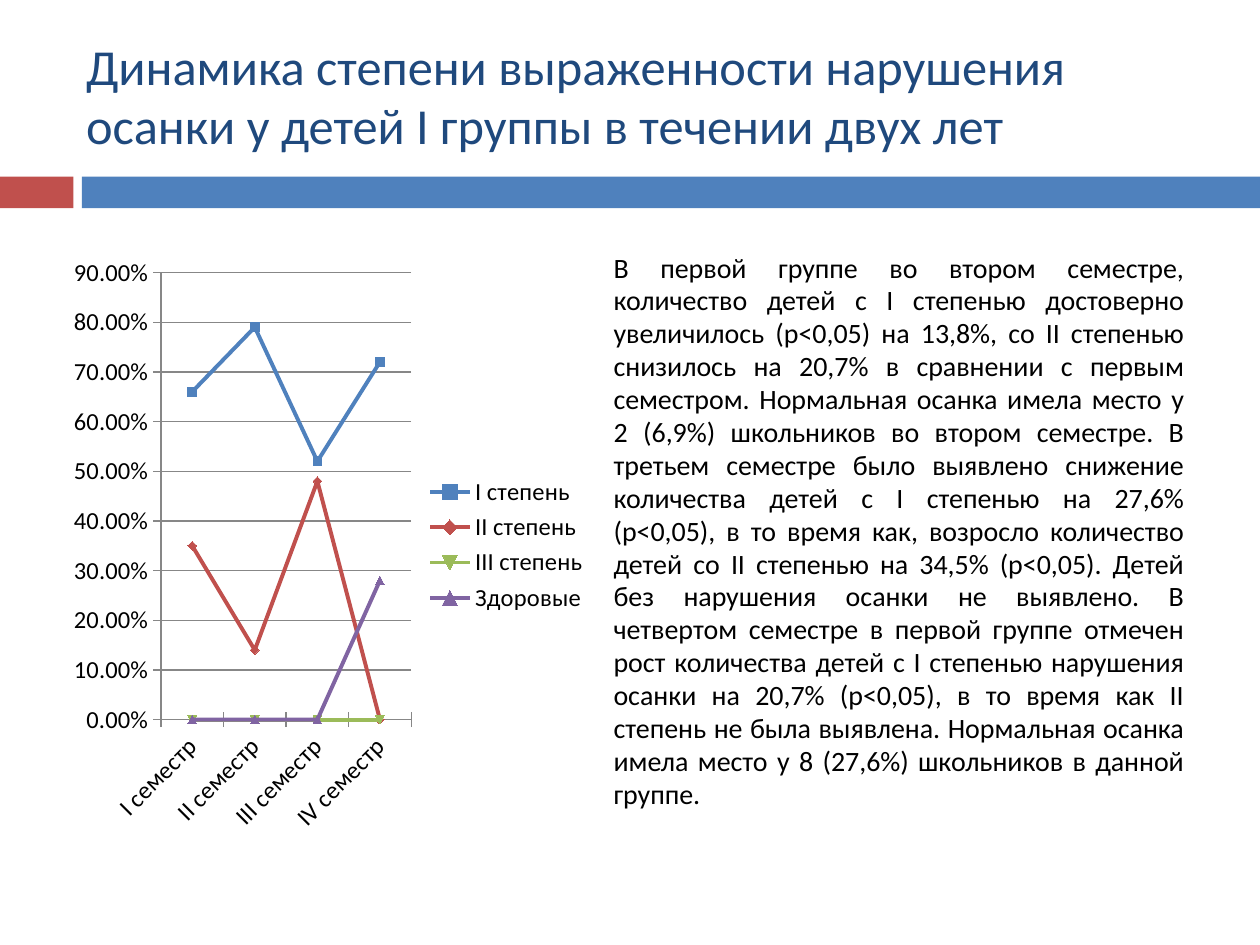
from pptx import Presentation
from pptx.chart.data import CategoryChartData
from pptx.dml.color import RGBColor
from pptx.enum.chart import XL_CHART_TYPE, XL_LEGEND_POSITION, XL_TICK_MARK
from pptx.enum.shapes import MSO_SHAPE
from pptx.enum.text import MSO_ANCHOR, MSO_AUTO_SIZE, PP_ALIGN
from pptx.util import Cm, Pt

RECTANGLE = MSO_SHAPE.RECTANGLE
LINE_MARKERS = XL_CHART_TYPE.LINE_MARKERS
LEGEND_RIGHT = XL_LEGEND_POSITION.RIGHT
TICK_CROSS = XL_TICK_MARK.CROSS
MIDDLE, TOP = MSO_ANCHOR.MIDDLE, MSO_ANCHOR.TOP
LEFT, JUSTIFY = PP_ALIGN.LEFT, PP_ALIGN.JUSTIFY
NO_AUTOFIT = MSO_AUTO_SIZE.NONE

FONT = "Calibri"
BLUE, RED, GREEN, PURPLE = "4F81BD", "C0504D", "9BBB59", "8064A2"
NAVY, BLACK, GRAY = "1F497D", "000000", "878787"

TITLE = "Динамика степени выраженности нарушения осанки у детей I группы в течении двух лет"
BODY = (
    "В первой группе во втором семестре, количество детей с I степенью достоверно "
    "увеличилось (p<0,05) на 13,8%, со II степенью снизилось на 20,7% в сравнении "
    "с первым семестром. Нормальная осанка имела место у 2 (6,9%) школьников во "
    "втором семестре. В третьем семестре было выявлено снижение количества детей "
    "с I степенью на 27,6% (p<0,05), в то время как, возросло количество детей "
    "со II степенью на 34,5% (p<0,05). Детей без нарушения осанки не выявлено. "
    "В четвертом семестре в первой группе отмечен рост количества детей с I "
    "степенью нарушения осанки на 20,7% (p<0,05), в то время как II степень не "
    "была выявлена. Нормальная осанка имела место у 8 (27,6%) школьников в данной "
    "группе."
)
SEMESTERS = ["I семестр", "II семестр", "III семестр", "IV семестр"]
DEGREES = [
    ("I степень", [0.66, 0.79, 0.52, 0.72], BLUE),
    ("II степень", [0.35, 0.14, 0.48, 0], RED),
    ("III степень", [0, 0, 0, 0], GREEN),
    ("Здоровые", [0, 0, 0, 0.28], PURPLE),
]


def color(value):
    return RGBColor.from_string(value)


def apply(target, values):
    for name, value in values.items():
        setattr(target, name, value)


class SlideBuilder:
    def __init__(self, slide, font):
        self.slide = slide
        self.font = font

    def style_font(self, font, size, font_color):
        apply(font, {"name": self.font, "size": Pt(size)})
        font.color.rgb = color(font_color)

    def fill_text(self, shape, text, size, font_color, anchor, alignment):
        frame = shape.text_frame
        apply(frame, {"text": text, "word_wrap": True, "auto_size": NO_AUTOFIT,
                      "vertical_anchor": anchor})
        paragraph = frame.paragraphs[0]
        apply(paragraph, {"alignment": alignment, "line_spacing": 0.98})
        self.style_font(paragraph.runs[0].font, size, font_color)

    def title(self, text, left, top, width, height):
        shape = self.slide.shapes.title
        apply(shape, {"left": Cm(left), "top": Cm(top),
                      "width": Cm(width), "height": Cm(height)})
        self.fill_text(shape, text, 28.8, NAVY, MIDDLE, LEFT)

    def text(self, text, left, top, width, height):
        shape = self.slide.shapes.add_textbox(Cm(left), Cm(top), Cm(width), Cm(height))
        self.fill_text(shape, text, 16, BLACK, TOP, JUSTIFY)

    def bar(self, left, top, width, height, fill):
        shape = self.slide.shapes.add_shape(
            RECTANGLE, Cm(left), Cm(top), Cm(width), Cm(height))
        shape.shadow.inherit = False
        shape.fill.solid()
        shape.fill.fore_color.rgb = color(fill)
        shape.line.fill.background()

    def style_line(self, line, width, line_color):
        line.width = Pt(width)
        line.color.rgb = color(line_color)

    def line_chart(self, categories, series_rows, left, top, width, height):
        data = CategoryChartData(number_format="0.00%")
        data.categories = categories
        for name, values, _ in series_rows:
            data.add_series(name, values)
        chart = self.slide.shapes.add_chart(
            LINE_MARKERS, Cm(left), Cm(top), Cm(width), Cm(height), data).chart
        self.style_font(chart.font, 18, BLACK)
        apply(chart, {"has_title": False, "has_legend": True})
        apply(chart.legend, {"position": LEGEND_RIGHT, "include_in_layout": False})
        self.style_font(chart.legend.font, 14, BLACK)

        # Axes
        for axis in (chart.category_axis, chart.value_axis):
            axis.major_tick_mark = TICK_CROSS
            self.style_font(axis.tick_labels.font, 14, BLACK)
            self.style_line(axis.format.line, 0.75, GRAY)
        value_axis = chart.value_axis
        apply(value_axis, {"minimum_scale": 0, "maximum_scale": 0.9, "major_unit": 0.1,
                           "has_major_gridlines": True})
        self.style_line(value_axis.major_gridlines.format.line, 0.75, GRAY)
        apply(value_axis.tick_labels, {"number_format": "0.00%",
                                       "number_format_is_linked": False})

        # Series
        plot = chart.plots[0]
        plot.vary_by_categories = False
        for series, (_, _, series_color) in zip(plot.series, series_rows):
            series.smooth = False
            self.style_line(series.format.line, 2.25, series_color)
            marker_format = series.marker.format
            marker_format.fill.solid()
            marker_format.fill.fore_color.rgb = color(series_color)
            marker_format.line.color.rgb = color(series_color)


def main():
    presentation = Presentation()
    apply(presentation, {"slide_width": Cm(25.4), "slide_height": Cm(19.05)})
    title_only = presentation.slide_layouts[5]
    builder = SlideBuilder(presentation.slides.add_slide(title_only), FONT)

    # Header
    builder.bar(0, 3.56, 1.48, 0.64, RED)
    builder.bar(1.65, 3.56, 23.75, 0.64, BLUE)
    builder.title(TITLE, 1.48, 0.76, 22.66, 2.41)

    # Chart and commentary share one row
    row_top, row_height = 4.95, 12.07
    builder.line_chart(SEMESTERS, DEGREES, 1.27, row_top, 10.85, row_height)
    builder.text(BODY, 12.12, row_top, 12.01, row_height)

    presentation.save("out.pptx")


if __name__ == "__main__":
    main()
